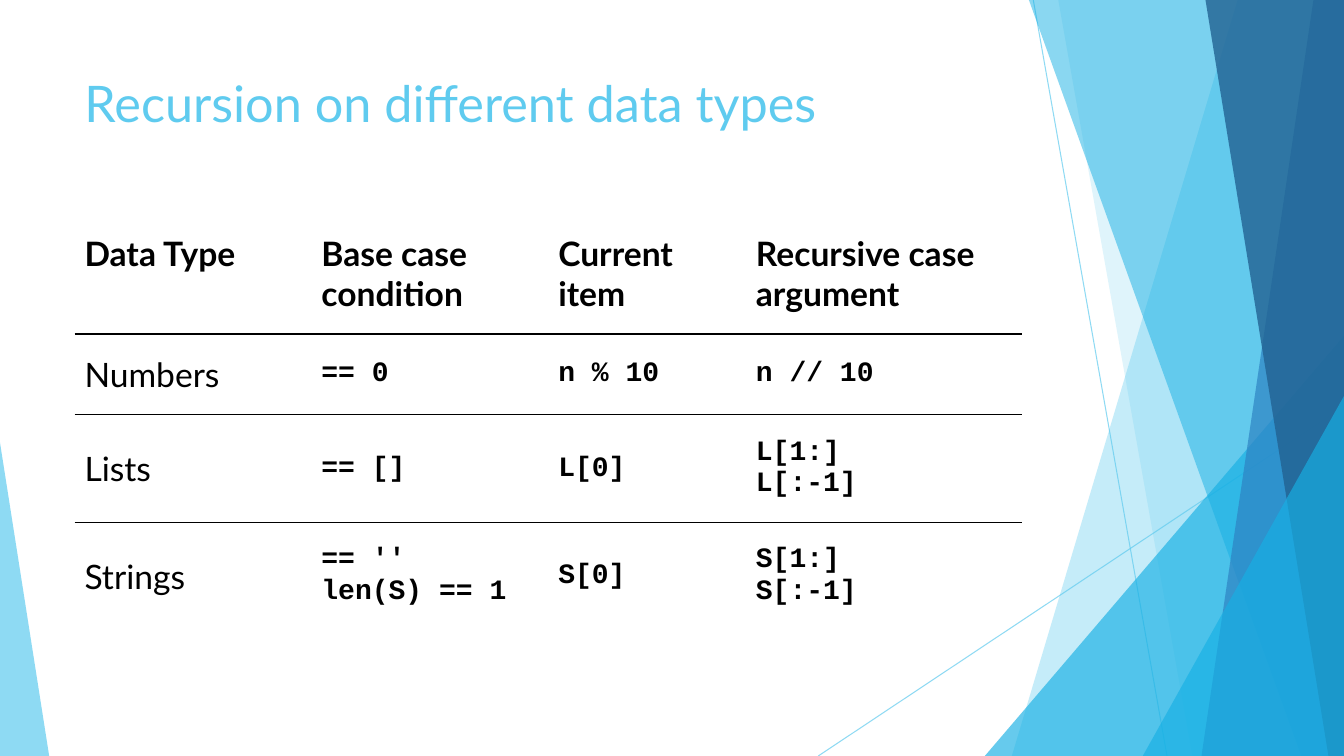
from lxml import etree
from pptx import Presentation
from pptx.dml.color import RGBColor
from pptx.enum.shapes import MSO_CONNECTOR, MSO_SHAPE
from pptx.enum.text import MSO_ANCHOR
from pptx.oxml.ns import qn
from pptx.util import Cm, Pt

STRAIGHT = MSO_CONNECTOR.STRAIGHT
TRIANGLE = MSO_SHAPE.ISOSCELES_TRIANGLE
MIDDLE, TOP = MSO_ANCHOR.MIDDLE, MSO_ANCHOR.TOP
SKY = RGBColor(0x5F, 0xCB, 0xEF)
CYAN = RGBColor(0x17, 0xB0, 0xE4)
BLUE = RGBColor(0x2E, 0x83, 0xC3)
NAVY = RGBColor(0x22, 0x62, 0x92)
BLACK = RGBColor(0, 0, 0)
WIDTH, HEIGHT = 33.87, 19.05
NO_GRID_STYLE = "{2D5ABB26-0587-4C30-8999-92F81FD0307C}"


def set_opacity(element, percent):
    color = next(element.iter(qn("a:srgbClr")))
    etree.SubElement(color, qn("a:alpha"), val=str(percent * 1000))


def add_bottom_border(cell, points):
    border = etree.Element(qn("a:lnB"), w=str(Pt(points)))
    fill = etree.SubElement(border, qn("a:solidFill"))
    etree.SubElement(fill, qn("a:srgbClr"), val=str(BLACK))
    cell._tc.get_or_add_tcPr().insert(0, border)


deck = Presentation()
deck.slide_width, deck.slide_height = Cm(WIDTH), Cm(HEIGHT)
slide = deck.slides.add_slide(deck.slide_layouts[6])
shapes = slide.shapes

for x1, y1, x2, y2 in [(26.04, 0, 29.41, HEIGHT), (WIDTH, 10.24, 20.62, HEIGHT)]:
    ray = shapes.add_connector(STRAIGHT, Cm(x1), Cm(y1), Cm(x2), Cm(y2))
    ray.line.color.rgb = SKY
    ray.line.width = Pt(0.75)
    set_opacity(ray.line._ln, 70)
    etree.SubElement(ray._element.spPr, qn("a:effectLst"))

# fmt: off
facets = [
    ("band", (31.19, 25.5), SKY, 36),
    ("band", (26.67, 30.05), SKY, 20),
    ("triangle", (24.82, 8.46, 9.05, 1), CYAN, 66),
    ("band", (25.93, 32.79), CYAN, 50),
    ("band", (33.1, 30.28), BLUE, 70),
    ("band", (30.38, 33.48), NAVY, 80),
    ("triangle", (28.8, 9.98, 5.07, 1), CYAN, 66),
    ("triangle", (0, 11.15, 1.24, 0), SKY, 70),
]
# fmt: on
for kind, geometry, color, opacity in facets:
    if kind == "band":
        top_x, bottom_x = geometry
        outline = shapes.build_freeform(Cm(top_x), 0)
        outline.add_line_segments(
            [(Cm(WIDTH), 0), (Cm(WIDTH), Cm(HEIGHT)), (Cm(bottom_x), Cm(HEIGHT))]
        )
        facet = outline.convert_to_shape()
    else:
        left, top, width, apex = geometry
        facet = shapes.add_shape(TRIANGLE, Cm(left), Cm(top), Cm(width), Cm(HEIGHT - top))
        facet.adjustments[0] = apex
    facet.shadow.inherit = False
    facet.line.fill.background()
    facet.fill.solid()
    facet.fill.fore_color.rgb = color
    set_opacity(facet._element.spPr, opacity)

title = shapes.add_textbox(Cm(1.88), Cm(1.7), Cm(23.88), Cm(3.66)).text_frame
title.word_wrap = True
title.vertical_anchor = TOP
title.text = "Recursion on different data types"
title_font = title.paragraphs[0].font
title_font.name, title_font.size = "Lato", Pt(36)
title_font.color.rgb = SKY

rows = [
    ["Data Type", "Base case condition", "Current item", "Recursive case argument"],
    ["Numbers", "== 0", "n % 10", "n // 10"],
    ["Lists", "== []", "L[0]", "L[1:]\nL[:-1]"],
    ["Strings", "== ''\nlen(S) == 1", "S[0]", "S[1:]\nS[:-1]"],
]
column_widths = [5.97, 5.97, 4.98, 6.96]
row_heights = [3.05, 2.03, 2.62, 2.62]
rule_widths = [1.5, 0.75, 1.5, None]

table = shapes.add_table(
    len(rows), len(column_widths), Cm(1.88), Cm(5.36),
    Cm(sum(column_widths)), Cm(sum(row_heights)),
).table
table.horz_banding = False
table.first_row = False
table._tbl.tblPr.find(qn("a:tableStyleId")).text = NO_GRID_STYLE
for column, width in zip(table.columns, column_widths):
    column.width = Cm(width)

for r, (texts, height, rule) in enumerate(zip(rows, row_heights, rule_widths)):
    table.rows[r].height = Cm(height)
    for c, text in enumerate(texts):
        cell = table.cell(r, c)
        cell.text = text
        cell.fill.background()
        cell.margin_left = cell.margin_right = Cm(0.25)
        cell.margin_top = cell.margin_bottom = Cm(0.51)
        cell.vertical_anchor = MIDDLE if r else TOP
        if rule:
            add_bottom_border(cell, rule)
        is_code = r > 0 and c > 0
        for paragraph in cell.text_frame.paragraphs:
            paragraph.font.name = "Courier New" if is_code else "Lato"
            paragraph.font.size = Pt(20 if is_code else 24)
            paragraph.font.bold = r == 0 or is_code
            paragraph.font.color.rgb = BLACK

deck.save("out.pptx")
